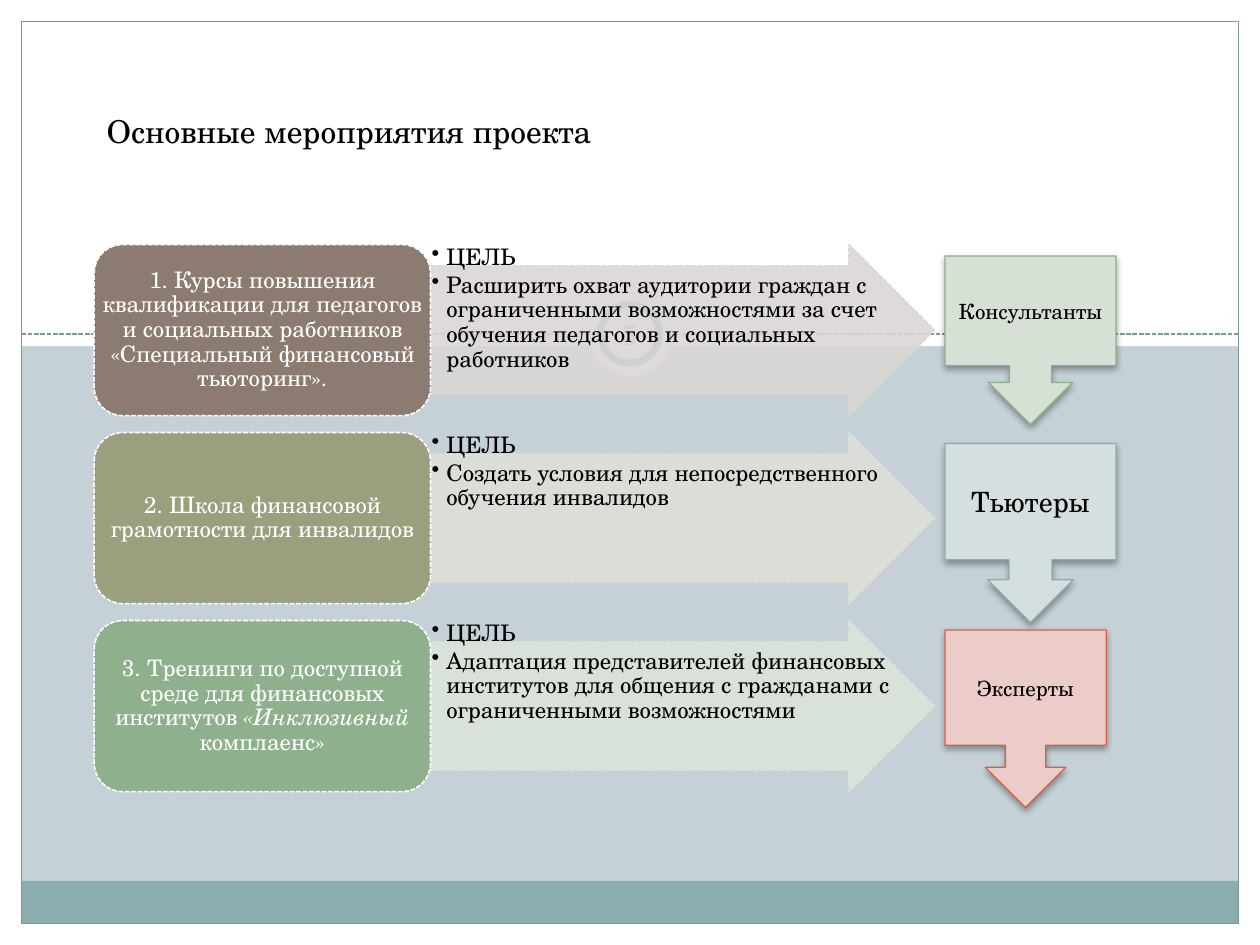
from dataclasses import dataclass

from lxml import etree
from pptx import Presentation
from pptx.dml.color import RGBColor
from pptx.enum.dml import MSO_LINE
from pptx.enum.shapes import MSO_CONNECTOR, MSO_SHAPE
from pptx.enum.text import MSO_ANCHOR, PP_ALIGN
from pptx.oxml.ns import qn
from pptx.util import Cm, Pt

RECT, OVAL, ROUNDED = MSO_SHAPE.RECTANGLE, MSO_SHAPE.OVAL, MSO_SHAPE.ROUNDED_RECTANGLE
ARROW, CALLOUT = MSO_SHAPE.RIGHT_ARROW, MSO_SHAPE.DOWN_ARROW_CALLOUT
DASHED = MSO_LINE.SQUARE_DOT
TOP, MIDDLE = MSO_ANCHOR.TOP, MSO_ANCHOR.MIDDLE
LEFT, CENTER = PP_ALIGN.LEFT, PP_ALIGN.CENTER


@dataclass(frozen=True)
class Theme:
    font: str = "TeX Gyre Schola"
    background: str = "C5D1D7"
    white: str = "FFFFFF"
    text: str = "000000"
    footer: str = "8CADAE"
    rule: str = "7C999A"
    title_size: int = 18
    number_size: int = 16
    body_size: int = 13


THEME = Theme()

# Activity: (text, italic) runs, card colour, goal, arrow colour
ACTIVITIES = [
    ([("1. Курсы повышения квалификации для педагогов и социальных работников "
       "«Специальный финансовый тьюторинг».", False)], "8C7B70",
     "Расширить охват аудитории граждан с ограниченными возможностями за счет "
     "обучения педагогов и социальных работников", "DAD7D5"),
    ([("2. Школа финансовой грамотности для инвалидов", False)], "9A9F7D",
     "Создать условия для непосредственного обучения инвалидов", "DEDFD8"),
    ([("3. Тренинги по доступной среде для финансовых институтов ", False),
      ("«Инклюзивный ", True), ("комплаенс»", False)], "8FB08C",
     "Адаптация представителей финансовых институтов для общения с гражданами "
     "с ограниченными возможностями", "DBE4DA"),
]

# Role: name, type size, fill, outline, box in cm
ROLES = [
    ("Консультанты", 12, "D6E0D5", "8FB08C", (19.05, 5.16, 3.45, 3.4)),
    ("Тьютеры", 16, "D5DFDF", "8CADAE", (19.05, 8.94, 3.45, 3.61)),
    ("Эксперты", 12, "ECCCC9", "D16349", (19.05, 12.7, 3.25, 3.58)),
]


def set_values(target, **values):
    for name, value in values.items():
        setattr(target, name, value)


def cm_box(box):
    return [Cm(length) for length in box]


def style_line(line, color, width, dash=None):
    line.color.rgb = RGBColor.from_string(color)
    set_values(line, width=Pt(width), dash_style=dash)


def add_block(slide, preset, box, fill=None, outline=None):
    """Preset shape; outline is (colour, width[, dash])."""
    block = slide.shapes.add_shape(preset, *cm_box(box))
    block.shadow.inherit = False
    if fill:
        block.fill.solid()
        block.fill.fore_color.rgb = RGBColor.from_string(fill)
    else:
        block.fill.background()
    if outline:
        style_line(block.line, *outline)
    else:
        block.line.fill.background()
    return block


def make_translucent(block, percent):
    for color in block._element.spPr.iter(qn("a:srgbClr")):
        etree.SubElement(color, qn("a:alpha"), val=str(percent * 1000))


def add_soft_shadow(block):
    effects = block._element.spPr.find(qn("a:effectLst"))
    shadow = etree.SubElement(effects, qn("a:outerShdw"), blurRad=str(Pt(4)),
                              dist=str(Pt(2)), dir="5400000", rotWithShape="0")
    color = etree.SubElement(shadow, qn("a:srgbClr"), val=THEME.text)
    etree.SubElement(color, qn("a:alpha"), val="35000")


def write(holder, paragraphs, size, color, anchor=MIDDLE, align=CENTER,
          insets=(0.13, 0.13), **spacing):
    """Fill a text frame; each paragraph is a list of (text, italic) runs."""
    frame = holder.text_frame
    across, down = cm_box(insets)
    set_values(frame, word_wrap=True, vertical_anchor=anchor, margin_left=across,
               margin_right=across, margin_top=down, margin_bottom=down)
    for index, runs in enumerate(paragraphs):
        paragraph = frame.add_paragraph() if index else frame.paragraphs[0]
        set_values(paragraph, alignment=align, **spacing)
        for text, italic in runs:
            run = paragraph.add_run()
            run.text = text
            set_values(run.font, name=THEME.font, size=Pt(size), italic=italic, bold=False)
            run.font.color.rgb = RGBColor.from_string(color)
    return frame


def add_bullets(frame, indent):
    for paragraph in frame.paragraphs:
        properties = paragraph._p.get_or_add_pPr()
        properties.set("marL", str(indent))
        properties.set("indent", str(-indent))
        etree.SubElement(properties, qn("a:buChar"), char="•")


def add_backdrop(slide, box):
    left, top, width, height = box
    margin, header, bar = 0.43, 6.98, 0.86
    right, bottom = left + width, top + height
    inner = width - 2 * margin
    slide.background.fill.solid()
    slide.background.fill.fore_color.rgb = RGBColor.from_string(THEME.background)

    # White margins and header, then the footer bar
    for strip in [(left, bottom - margin, width, margin),
                  (right - margin, top, margin, height),
                  (left, top, margin, height),
                  (left, top, width, header)]:
        add_block(slide, RECT, strip, THEME.white)
    add_block(slide, RECT, (left + margin, bottom - margin - bar, inner, bar), THEME.footer)

    # Dashed divider and frame
    divider_y = top + 6.73
    divider = slide.shapes.add_connector(
        MSO_CONNECTOR.STRAIGHT,
        *cm_box((left + margin, divider_y, right - margin, divider_y)))
    style_line(divider.line, THEME.rule, 0.9, DASHED)
    etree.SubElement(divider._element.spPr, qn("a:effectLst"))
    add_block(slide, RECT, (left + margin, top + margin, inner, height - 2 * margin),
              outline=(THEME.rule, 0.75))

    # Page number ring, centred on the divider
    center = left + width / 2
    for diameter, outline in [(1.7, None), (1.18, (THEME.rule, 4))]:
        ring = (center - diameter / 2, divider_y - diameter / 2, diameter, diameter)
        add_block(slide, OVAL, ring, THEME.white, outline)
    number = slide.shapes.add_textbox(*cm_box((center - 0.64, divider_y - 0.61, 1.27, 1.22)))
    write(number, [[("5", False)]], THEME.number_size, THEME.rule)


def add_activity(slide, box, card_runs, card_color, goal, arrow_color):
    left, top, width, height = box
    card_box = (left, top, 6.78, height)
    goal_box = (left + 6.78, top, width - 6.78, height)

    # Goal arrow, with text using the full height of its box
    arrow = add_block(slide, ARROW, goal_box, arrow_color, (arrow_color, 0.9, DASHED))
    arrow.adjustments[0] = 0.75
    make_translucent(arrow, 90)
    goal_text = slide.shapes.add_textbox(*cm_box(goal_box))
    frame = write(goal_text, [[("ЦЕЛЬ", False)], [(goal, False)]], THEME.body_size,
                  THEME.text, TOP, LEFT, (0.02, 0.02), line_spacing=0.9, space_after=Pt(2))
    add_bullets(frame, Cm(0.3))

    # Activity card, with text using the full width of its box
    add_block(slide, ROUNDED, card_box, card_color, (THEME.white, 0.9, DASHED))
    card_text = slide.shapes.add_textbox(*cm_box(card_box))
    write(card_text, [card_runs], THEME.body_size, THEME.white,
          insets=(0.13, 0.08), line_spacing=0.9)


def add_role(slide, box, name, size, fill, outline):
    callout = add_block(slide, CALLOUT, box, fill, (outline, 0.75))
    add_soft_shadow(callout)
    write(callout, [[(name, False)]], size, THEME.text)


def add_title(slide, box):
    title = slide.shapes.title
    left, top, width, height = cm_box(box)
    set_values(title, left=left, top=top, width=width, height=height)
    write(title, [[("Основные мероприятия проекта", False)]], THEME.title_size,
          THEME.text, TOP, LEFT, (0.25, 0.13))
    slide.shapes._spTree.append(title._element)  # in front of the header


def main():
    deck = Presentation()
    set_values(deck, slide_width=Cm(25.4), slide_height=Cm(19.05))
    slide = deck.slides.add_slide(deck.slide_layouts[5])
    add_backdrop(slide, (0, 0, 25.4, 19.05))
    for row, activity in enumerate(ACTIVITIES):
        add_activity(slide, (1.9, 4.93 + row * 3.79, 16.94, 3.45), *activity)
    for name, size, fill, outline, box in ROLES:
        add_role(slide, box, name, size, fill, outline)
    add_title(slide, (1.9, 2.13, 19.46, 1.8))
    deck.save("out.pptx")


if __name__ == "__main__":
    main()
